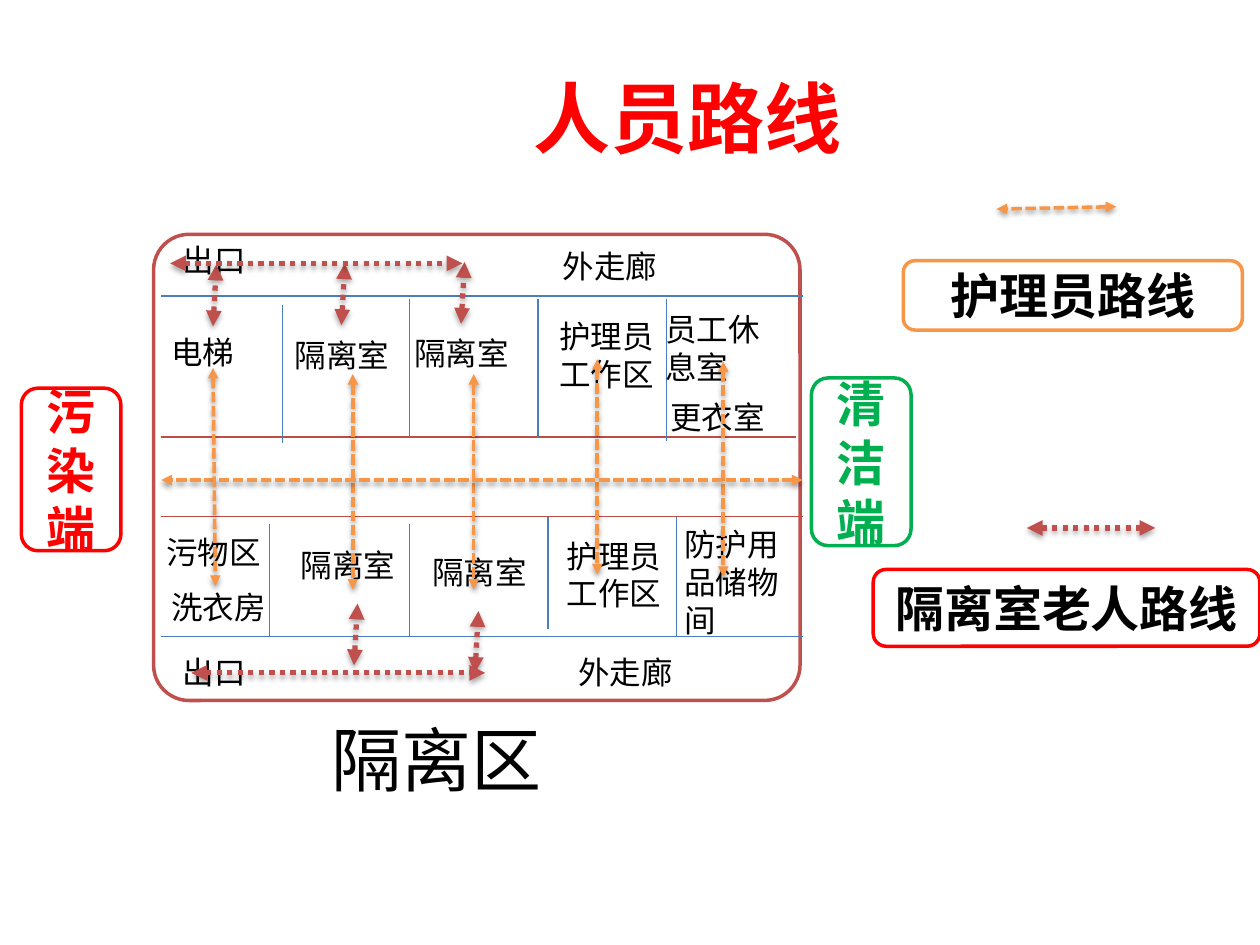
from dataclasses import dataclass

from lxml import etree
from pptx import Presentation
from pptx.dml.color import RGBColor
from pptx.enum.dml import MSO_LINE
from pptx.enum.shapes import MSO_CONNECTOR, MSO_SHAPE
from pptx.enum.text import MSO_ANCHOR, MSO_AUTO_SIZE, PP_ALIGN
from pptx.oxml.ns import qn
from pptx.util import Pt

STRAIGHT = MSO_CONNECTOR.STRAIGHT
ROUND = MSO_SHAPE.ROUNDED_RECTANGLE
MIDDLE = MSO_ANCHOR.MIDDLE
CENTER = PP_ALIGN.CENTER
GROW = MSO_AUTO_SIZE.SHAPE_TO_FIT_TEXT
DASH, DOT = MSO_LINE.SQUARE_DOT, MSO_LINE.ROUND_DOT


@dataclass(frozen=True)
class Theme:
    """Colours, faces and type sizes of the slide."""
    red: str = "FF0000"
    green: str = "00B050"
    black: str = "000000"
    white: str = "FFFFFF"
    brick: str = "C0504D"
    rust: str = "BF4C48"
    blue: str = "4B7EBC"
    orange: str = "F79646"
    head: str = "Calibri"
    body: str = "Arial"
    title: int = 44
    zone: int = 40
    sign: int = 28
    room: int = 18


@dataclass(frozen=True)
class Route:
    """Line style of one kind of route."""
    color: str
    width: float
    dash: object
    alpha: int
    drop: float


T = Theme()
STAFF = Route(T.orange, 2, DASH, 38, 1.6)
ELDER = Route(T.brick, 3, DOT, 35, 1.8)

ACROSS = [(169.2, 458.6, T.blue), (249.8, 455, T.rust),
          (295.2, 458.6, T.rust), (363.6, 458.6, T.blue)]
DOWN = [(161.3, 174.2, 253.4), (234, 170.6, 249.8), (307.4, 170.6, 249.8),
        (380.9, 170.6, 252), (154.1, 299.5, 363.6), (234, 299.5, 363.6),
        (313.2, 295.2, 359.3), (386.6, 295.2, 363.6)]
ROOMS = [("出口", 97.2, 133.9, 73.4, 1), ("外走廊", 314.6, 137.5, 85.7, 1),
         ("电梯", 90.7, 186.5, 73.4, 1), ("隔离室", 161.3, 188.6, 73.4, 1),
         ("隔离室", 229.7, 187.2, 73.4, 1), ("护理员工作区", 312.5, 177.8, 73.4, 2),
         ("员工休息室", 373, 173.5, 84.2, 2), ("更衣室", 375.8, 223.9, 73.4, 1),
         ("污物区", 87.8, 301, 73.4, 1), ("洗衣房", 90.7, 332.6, 73.4, 1),
         ("隔离室", 164.9, 308.2, 73.4, 1), ("隔离室", 239.8, 312.5, 73.4, 1),
         ("护理员工作区", 316.8, 303.1, 73.4, 2),
         ("防护用品储物间", 383.8, 296.6, 73.4, 3),
         ("出口", 97.2, 369.4, 73.4, 1), ("外走廊", 323.3, 369.4, 73.4, 1)]
SHAFTS = [(341.3, 205.2), (270.7, 213.8), (413.3, 206.6), (201.6, 213.8)]
DOORS = [(195.1, 185.8), (263.5, 185), (202.3, 380.2), (271.4, 384.5),
         (121.7, 186.5)]
SIGNS = [("护理员路线", (516.2, 149, 193.7, 39.6), T.orange, T.black),
         ("隔离室老人路线", (499, 325.4, 221, 43.9), T.red, T.black),
         ("清洁端", (463.7, 216, 56.9, 95.8), T.green, T.green),
         ("污染端", (12.2, 221.8, 56.9, 92.9), T.red, T.red)]


def pts(vals):
    """Turn numbers into point lengths."""
    return [Pt(val) for val in vals]


def style(item, vals):
    """Set each attribute named in a dict."""
    for name, val in vals.items():
        setattr(item, name, val)


def write(frame, text, size, face, color, bold=False, align=None):
    """Fill a text frame with one formatted line of text."""
    frame.text = text
    line = frame.paragraphs[0]
    line.alignment = align
    font = line.runs[0].font
    style(font, {"size": Pt(size), "name": face, "bold": bold})
    font.color.rgb = RGBColor.from_string(color)


def label(shapes, text, box, size):
    """Add a plain text box."""
    frame = shapes.add_textbox(*pts(box)).text_frame
    style(frame, {"word_wrap": True, "auto_size": GROW})
    write(frame, text, size, T.body, T.black)


def panel(shapes, box, color):
    """Add an outlined round box."""
    shape = shapes.add_shape(ROUND, *pts(box))
    shape.shadow.inherit = False
    shape.fill.background()
    shape.line.color.rgb = RGBColor.from_string(color)
    shape.line.width = Pt(2)
    return shape


def sign(shapes, text, box, edge, color):
    """Add a round box with bold centred text."""
    frame = panel(shapes, box, edge).text_frame
    style(frame, {"word_wrap": True, "vertical_anchor": MIDDLE})
    write(frame, text, T.sign, T.head, color, True, CENTER)


def stroke(shapes, ends, color, width):
    """Add a straight line and return it with its empty effect list."""
    link = shapes.add_connector(STRAIGHT, *pts(ends))
    link.line.color.rgb = RGBColor.from_string(color)
    link.line.width = Pt(width)
    return link, etree.SubElement(link._element.spPr, qn("a:effectLst"))


def arrow(shapes, ends, route):
    """Add a two-headed route line with a soft shadow."""
    link, effects = stroke(shapes, ends, route.color, route.width)
    link.line.dash_style = route.dash
    for tag in ("a:headEnd", "a:tailEnd"):
        etree.SubElement(link.line._ln, qn(tag), type="triangle")
    shade = etree.SubElement(effects, qn("a:outerShdw"), blurRad=str(Pt(3.1)),
                             dist=str(Pt(route.drop)), dir="5400000",
                             rotWithShape="0")
    tint = etree.SubElement(shade, qn("a:srgbClr"), val=T.black)
    etree.SubElement(tint, qn("a:alpha"), val=str(route.alpha * 1000))


def plan(shapes):
    """Draw the ward, its walls and its room names."""
    ward = panel(shapes, (87.8, 133.9, 369.4, 266.4), T.brick)
    ward.adjustments[0] = 0.076
    ward.fill.solid()
    ward.fill.fore_color.rgb = RGBColor.from_string(T.white)
    for y, end, color in ACROSS:
        stroke(shapes, (92.2, y, end, y), color, 0.75)
    for x, top, end in DOWN:
        stroke(shapes, (x, top, x, end), T.blue, 0.75)
    for text, x, y, width, rows in ROOMS:
        label(shapes, text, (x, y, width, 7.2 + 21.8 * rows), T.room)
    label(shapes, "隔离区", (182.2, 406.1, 172.1, 55.4), T.zone)


def routes(shapes):
    """Draw the staff and elder routes inside the ward."""
    for x, y in SHAFTS:
        arrow(shapes, (x, y, x, y + 123.1), STAFF)
    arrow(shapes, (458.6, 274.3, 92.2, 274.3), STAFF)
    arrow(shapes, (121.7, 210.2, 123.1, 334.8), STAFF)
    for x, y in DOORS:
        arrow(shapes, (x, y, x + 2, y - 35.3), ELDER)
    arrow(shapes, (97.2, 150.5, 264.2, 150.5), ELDER)
    arrow(shapes, (109.4, 384.5, 277.2, 384.5), ELDER)


def main():
    """Build and save the slide."""
    deck = Presentation()
    style(deck, {"slide_width": Pt(720), "slide_height": Pt(540)})
    shapes = deck.slides.add_slide(deck.slide_layouts[5]).shapes
    title = shapes.title
    style(title, dict(zip(("left", "top", "width", "height"),
                          pts((101.5, 21.6, 582.5, 90)))))
    title.text_frame.vertical_anchor = MIDDLE
    write(title.text_frame, "人员路线", T.title, T.head, T.red, True, CENTER)
    ward = shapes.add_group_shape().shapes
    plan(ward)
    routes(ward)
    arrow(shapes, (637.9, 118.1, 569.5, 119.5), STAFF)
    arrow(shapes, (586.8, 301.7, 660.2, 301.7), ELDER)
    for item in SIGNS:
        sign(shapes, *item)
    deck.save("out.pptx")


if __name__ == "__main__":
    main()
